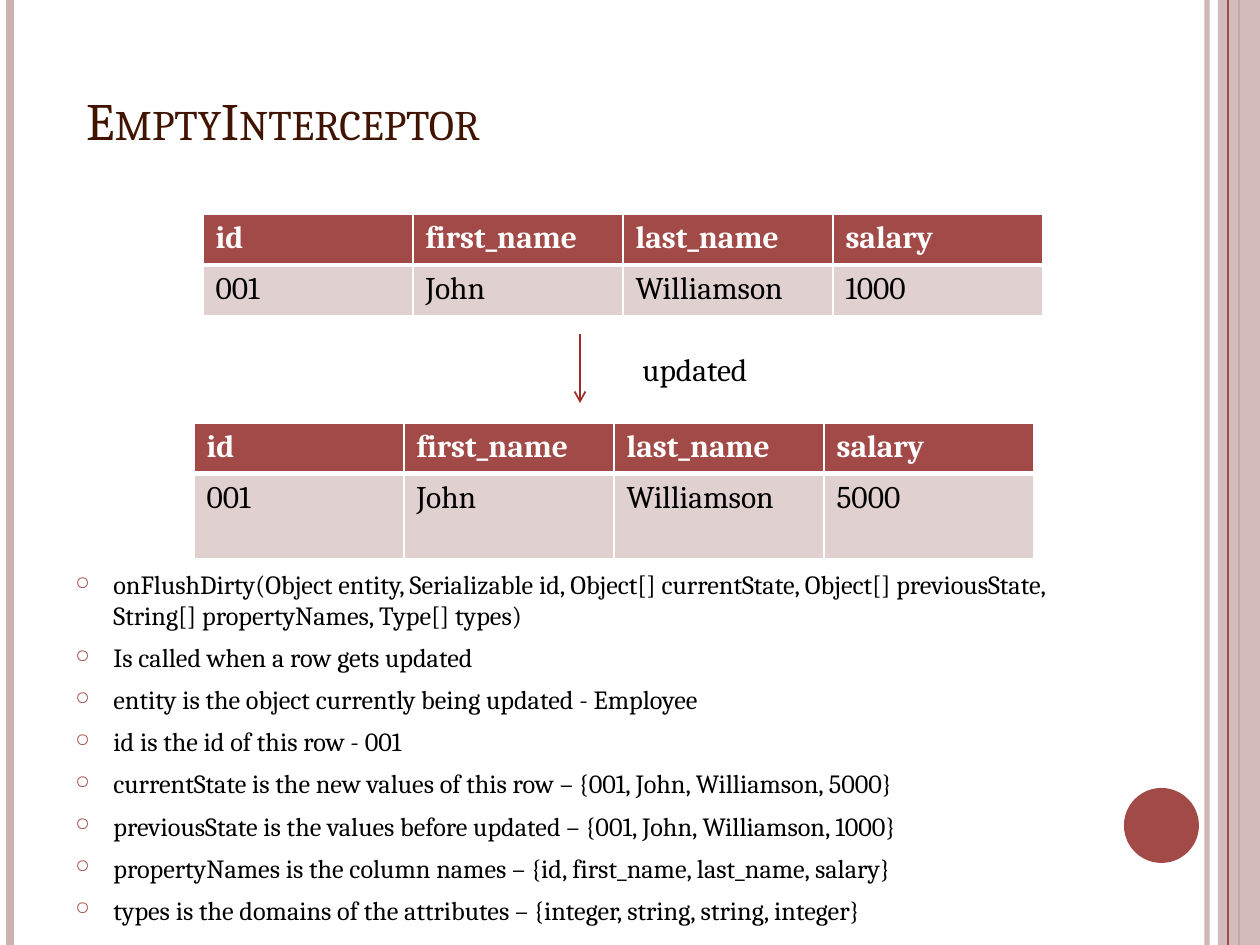
from lxml.etree import SubElement
from pptx import Presentation
from pptx.dml.color import RGBColor
from pptx.enum.shapes import MSO_CONNECTOR, MSO_SHAPE
from pptx.enum.text import MSO_ANCHOR
from pptx.oxml.ns import qn
from pptx.util import Emu, Pt

THEME = {
    "font": "Cambria",
    "accent": "A24A48", "pale": "CEB2B1", "band": "E0D0CF", "arrow": "9E2D2A",
    "title": "411401", "text": "000000", "white": "FFFFFF",
    "title_size": 30, "table_size": 18, "body_size": 15,
}
SCALE = 914400 / 126


def px(*lengths):
    return [Emu(round(n * SCALE)) for n in lengths]


def write(p, text, size, color, bold=False):
    r = p.add_run()
    r.text = text
    fmt = {"name": THEME["font"], "size": Pt(size), "bold": bold}
    for name, value in fmt.items():
        setattr(r.font, name, value)
    r.font.color.rgb = RGBColor.from_string(color)
    return r


prs = Presentation()
prs.slide_width, prs.slide_height = px(1260, 945)
s = prs.slides.add_slide(prs.slide_layouts[6])

# Side stripes, the circle and the arrow, from back to front
pale, accent = THEME["pale"], THEME["accent"]
decor = [
    ("line", (1207, 0, 1207, 945), pale, 3, 93),
    ("line", (10, 0, 10, 945), pale, 4.5, 100),
    ("line", (1239, 0, 1239, 945), accent, 1.5, 100),
    (MSO_SHAPE.RECTANGLE, (1218, 0, 42, 945), pale, 0, 87),
    ("line", (1228, 0, 1228, 945), accent, 0.75, 100),
    (MSO_SHAPE.OVAL, (1124, 788, 75, 75), accent, 0, 100),
    ("arrow", (580, 334, 580, 403), THEME["arrow"], 1, 100),
]
for kind, box, color, width, alpha in decor:
    if kind in ("line", "arrow"):
        sp = s.shapes.add_connector(MSO_CONNECTOR.STRAIGHT, *px(*box))
        sp.line.width = Pt(width)
        fill = sp.line.fill
    else:
        sp = s.shapes.add_shape(kind, *px(*box))
        sp.shadow.inherit = False
        sp.line.fill.background()
        fill = sp.fill
    fill.solid()
    fill.fore_color.rgb = RGBColor.from_string(color)
    spPr = sp._element.spPr
    if alpha < 100:
        clr = next(spPr.iter(qn("a:srgbClr")))
        SubElement(clr, qn("a:alpha"), val=str(alpha * 1000))
    if kind == "arrow":
        SubElement(spPr.find(qn("a:ln")), qn("a:tailEnd"), type="arrow")
    if kind in ("line", "arrow"):
        SubElement(spPr, qn("a:effectLst"))

# Title
tf = s.shapes.add_textbox(*px(74, 0, 1012, 157)).text_frame
tf.word_wrap = True
tf.vertical_anchor = MSO_ANCHOR.BOTTOM
r = write(tf.paragraphs[0], "EmptyInterceptor", THEME["title_size"], THEME["title"])
r._r.get_or_add_rPr().set("cap", "small")

# Row before and after the update
header = ["id", "first_name", "last_name", "salary"]
tables = [
    (203, 214, (51, 51), ["001", "John", "Williamson", "1000"]),
    (194, 423, (48, 85), ["001", "John", "Williamson", "5000"]),
]
for left, top, heights, values in tables:
    frame = s.shapes.add_table(2, 4, *px(left, top, 840, sum(heights)))
    tbl = frame.table
    for col in tbl.columns:
        col.width = px(210)[0]
    for i, row in enumerate((header, values)):
        tbl.rows[i].height = px(heights[i])[0]
        is_head = i == 0
        for j, text in enumerate(row):
            cell = tbl.cell(i, j)
            write(cell.text_frame.paragraphs[0], text, THEME["table_size"],
                  THEME["white" if is_head else "text"], is_head)
            tcPr = cell._tc.get_or_add_tcPr()
            heavy = "lnB" if is_head else "lnT"
            for side in ("lnL", "lnR", "lnT", "lnB"):
                width = Pt(3 if side == heavy else 1)
                ln = SubElement(tcPr, qn("a:" + side), w=str(width))
                SubElement(SubElement(ln, qn("a:solidFill")), qn("a:srgbClr"),
                           val=THEME["white"])
            cell.fill.solid()
            cell.fill.fore_color.rgb = RGBColor.from_string(
                THEME["accent" if is_head else "band"])

# Arrow label
tf = s.shapes.add_textbox(*px(630, 344, 154, 50)).text_frame
tf.word_wrap = False
write(tf.paragraphs[0], "updated", THEME["table_size"], THEME["text"])

# Notes on the method and its parameters
bullets = [
    "onFlushDirty(Object entity, Serializable id, Object[] currentState, "
    "Object[] previousState, String[] propertyNames, Type[] types)",
    "Is called when a row gets updated",
    "entity is the object currently being updated - Employee",
    "id is the id of this row - 001",
    "currentState is the new values of this row – {001, John, Williamson, 5000}",
    "previousState is the values before updated – {001, John, Williamson, 1000}",
    "propertyNames is the column names – {id, first_name, last_name, salary}",
    "types is the domains of the attributes – {integer, string, string, integer}",
]
tf = s.shapes.add_textbox(*px(63, 562, 1029, 383)).text_frame
tf.word_wrap = True
indent = px(38)[0]
for i, text in enumerate(bullets):
    p = tf.add_paragraph() if i else tf.paragraphs[0]
    p.space_before = Pt(6)
    write(p, text, THEME["body_size"], THEME["text"])
    pPr = p._p.get_or_add_pPr()
    pPr.set("marL", str(indent))
    pPr.set("indent", str(-indent))
    SubElement(SubElement(pPr, qn("a:buClr")), qn("a:srgbClr"), val=accent)
    SubElement(pPr, qn("a:buSzPct"), val="70000")
    SubElement(pPr, qn("a:buChar"), char="○")

prs.save("out.pptx")
